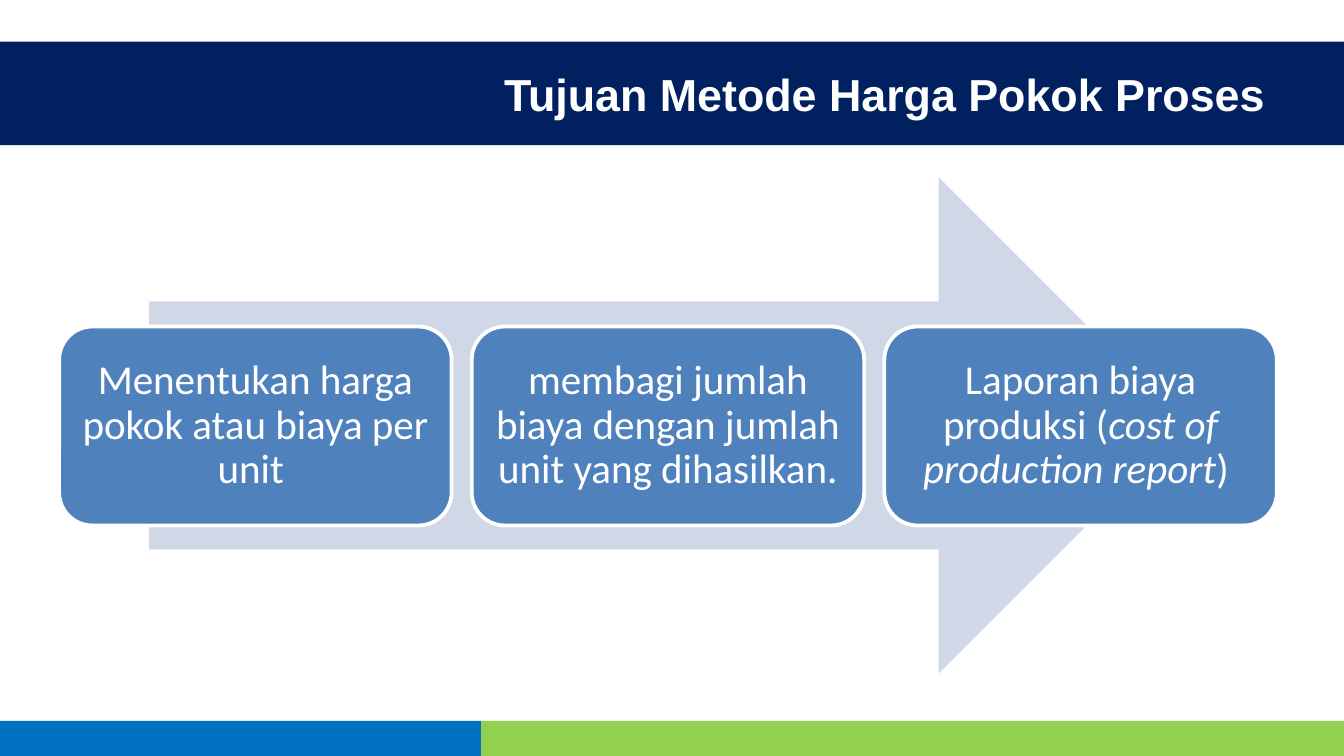
from dataclasses import dataclass

import pptx
import pptx.dml.color
import pptx.enum.shapes
import pptx.enum.text
import pptx.util

Inches = pptx.util.Inches
Pt = pptx.util.Pt
MSO_SHAPE = pptx.enum.shapes.MSO_SHAPE
PP_ALIGN = pptx.enum.text.PP_ALIGN

COLORS = {
    "navy": "002060",
    "blue": "0070C0",
    "green": "92D050",
    "arrow": "D0D8E8",
    "card": "4F81BD",
    "white": "FFFFFF",
}

# Widescreen 16:9
SLIDE_WIDTH = 10
SLIDE_HEIGHT = SLIDE_WIDTH * 9 / 16


@dataclass
class Block:
    left: float
    top: float
    width: float
    height: float
    color: str
    kind: int = MSO_SHAPE.RECTANGLE


@dataclass
class Run:
    text: str
    italic: bool = False


def rgb(name: str) -> pptx.dml.color.RGBColor:
    return pptx.dml.color.RGBColor.from_string(COLORS[name])


def draw_block(slide, block: Block):
    shape = slide.shapes.add_shape(
        block.kind, Inches(block.left), Inches(block.top),
        Inches(block.width), Inches(block.height))
    shape.shadow.inherit = False
    shape.fill.solid()
    shape.fill.fore_color.rgb = rgb(block.color)
    shape.line.fill.background()
    return shape


def write(shape, runs: list[Run], font: str, size: int, align,
          bold: bool = False) -> None:
    frame = shape.text_frame
    frame.word_wrap = True
    frame.vertical_anchor = pptx.enum.text.MSO_ANCHOR.MIDDLE
    paragraph = frame.paragraphs[0]
    paragraph.alignment = align
    paragraph.font.name = font
    paragraph.font.size = Pt(size)
    paragraph.font.bold = bold
    paragraph.font.color.rgb = rgb("white")
    for part in runs:
        run = paragraph.add_run()
        run.text = part.text
        if part.italic:
            run.font.italic = True


def draw_goal(slide, left: float, runs: list[Run]) -> None:
    card = draw_block(slide, Block(left, 2.43, 2.92, 1.48, "card",
                                   MSO_SHAPE.ROUNDED_RECTANGLE))
    card.line.color.rgb = rgb("white")
    card.line.width = Pt(2)
    frame = card.text_frame
    frame.margin_left = frame.margin_right = Inches(0.09)
    frame.margin_top = frame.margin_bottom = Inches(0.09)
    write(card, runs, "Calibri", 22, PP_ALIGN.CENTER)
    frame.paragraphs[0].line_spacing = 0.9


FOOTER_HEIGHT = 0.26
FOOTER_TOP = SLIDE_HEIGHT - FOOTER_HEIGHT
FOOTER_SPLIT = 3.58
BANDS = [
    Block(0, FOOTER_TOP, FOOTER_SPLIT, FOOTER_HEIGHT, "blue"),
    Block(FOOTER_SPLIT, FOOTER_TOP, SLIDE_WIDTH - FOOTER_SPLIT,
          FOOTER_HEIGHT, "green"),
    Block(0, 0.31, SLIDE_WIDTH, 0.77, "navy"),
]
GOALS = [
    [Run("Menentukan harga pokok atau biaya per unit ")],
    [Run("membagi jumlah biaya dengan jumlah unit yang dihasilkan. ")],
    [Run("Laporan biaya produksi ("),
     Run("cost of production report", italic=True), Run(") ")],
]
FIRST_GOAL_LEFT = 0.44
GOAL_STEP = 3.07


def main() -> None:
    deck = pptx.Presentation()
    deck.slide_width = Inches(SLIDE_WIDTH)
    deck.slide_height = Inches(SLIDE_HEIGHT)
    slide = deck.slides.add_slide(deck.slide_layouts[6])

    # Header and footer bands
    for band in BANDS:
        draw_block(slide, band)

    # Title
    title = slide.shapes.add_textbox(
        Inches(1.66), Inches(0.31), Inches(7.85), Inches(0.77))
    write(title, [Run("Tujuan Metode Harga Pokok Proses")],
          "Arial", 24, PP_ALIGN.RIGHT, bold=True)

    # Arrow with the three goals on it
    draw_block(slide, Block(1.11, 1.32, 7.72, 3.69, "arrow",
                            MSO_SHAPE.RIGHT_ARROW))
    for index, runs in enumerate(GOALS):
        draw_goal(slide, FIRST_GOAL_LEFT + index * GOAL_STEP, runs)

    deck.save("out.pptx")


if __name__ == "__main__":
    main()
